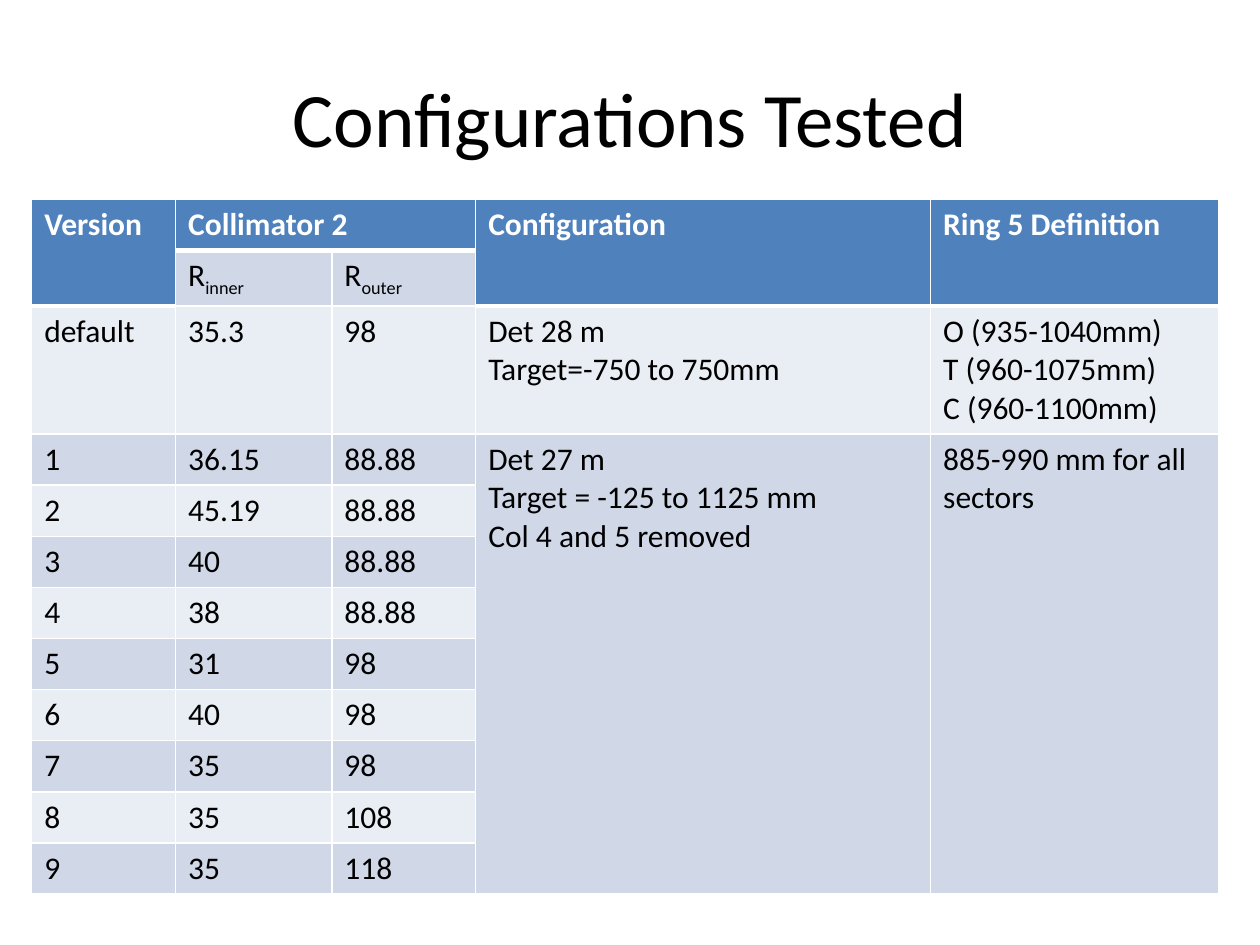
from lxml.etree import SubElement
from pptx import Presentation
from pptx.dml.color import RGBColor
from pptx.enum.text import MSO_ANCHOR, PP_ALIGN
from pptx.oxml.ns import qn
from pptx.util import Cm, Pt

HEADER, BAND_DARK, BAND_LIGHT = "4F81BD", "D0D8E8", "E9EDF4"
WHITE, BLACK = "FFFFFF", "000000"
TITLE_FONT = {"name": "Calibri", "size": Pt(44), "bold": False}
BODY_FONT = {"name": "Calibri", "size": Pt(18), "bold": False}
HEADER_FONT = BODY_FONT | {"bold": True}

COLUMN_WIDTHS = [2.9, 3.15, 2.9, 9.17]
ROW_HEIGHT, DEFAULT_ROW, DEFAULT_HEIGHT = 1.03, 2, 2.58
MERGES = [(0, 0, 1, 0), (0, 1, 0, 2), (0, 3, 1, 3), (0, 4, 1, 4),
          (3, 3, 11, 3), (3, 4, 11, 4)]
ROWS = [
    ["Version", "Collimator 2", "", "Configuration", "Ring 5 Definition"],
    ["", "R_inner", "R_outer", "", ""],
    ["default", "35.3", "98", "Det 28 m\nTarget=-750 to 750mm",
     "O (935-1040mm)\nT (960-1075mm)\nC (960-1100mm)"],
    ["1", "36.15", "88.88",
     "Det 27 m\nTarget = -125 to 1125 mm\nCol 4 and 5 removed",
     "885-990 mm for all sectors"],
    ["2", "45.19", "88.88", "", ""],
    ["3", "40", "88.88", "", ""],
    ["4", "38", "88.88", "", ""],
    ["5", "31", "98", "", ""],
    ["6", "40", "98", "", ""],
    ["7", "35", "98", "", ""],
    ["8", "35", "108", "", ""],
    ["9", "35", "118", "", ""],
]


def color(value):
    return RGBColor.from_string(value)


def set_values(target, values):
    for name, value in values.items():
        setattr(target, name, value)


def add_run(paragraph, text, font, text_color):
    run = paragraph.add_run()
    run.text = text
    set_values(run.font, font)
    run.font.color.rgb = color(text_color)
    return run


def write_cell(cell, text, font, text_color):
    frame = cell.text_frame
    for index, line in enumerate(text.split("\n")):
        paragraph = frame.add_paragraph() if index else frame.paragraphs[0]
        base, _, subscript = line.partition("_")
        add_run(paragraph, base, font, text_color)
        if subscript:
            run = add_run(paragraph, subscript, font, text_color)
            run._r.get_or_add_rPr().set("baseline", "-25000")


def add_borders(cell, widths):
    properties = cell._tc.get_or_add_tcPr()
    for side, width in widths.items():
        line = SubElement(properties, qn(f"a:ln{side}"), w=str(Pt(width)))
        fill = SubElement(line, qn("a:solidFill"))
        SubElement(fill, qn("a:srgbClr"), val=WHITE)


def add_title(slide, left, top, width, height):
    shape = slide.shapes.add_textbox(left, top, width, height)
    set_values(shape.text_frame, {"word_wrap": True,
                                  "vertical_anchor": MSO_ANCHOR.MIDDLE})
    paragraph = shape.text_frame.paragraphs[0]
    paragraph.alignment = PP_ALIGN.CENTER
    add_run(paragraph, "Configurations Tested", TITLE_FONT, BLACK)


def add_configuration_table(slide, left, top, width, height):
    shape = slide.shapes.add_table(len(ROWS), len(ROWS[0]), left, top, width, height)
    table = shape.table
    widths = [Cm(value) for value in COLUMN_WIDTHS]
    widths.append(width - sum(widths))
    for column, column_width in zip(table.columns, widths):
        column.width = column_width
    for index, row in enumerate(table.rows):
        row.height = Cm(DEFAULT_HEIGHT if index == DEFAULT_ROW else ROW_HEIGHT)
    for first_row, first_column, last_row, last_column in MERGES:
        table.cell(first_row, first_column).merge(table.cell(last_row, last_column))

    for row_index, texts in enumerate(ROWS):
        band = BAND_DARK if row_index % 2 else BAND_LIGHT
        for column_index, text in enumerate(texts):
            cell = table.cell(row_index, column_index)
            is_header = row_index == 0 or (row_index == 1 and cell.is_spanned)
            borders = {"L": 1, "R": 1}
            if row_index == 0:
                borders["T"] = 1
            borders["B"] = 3 if is_header else 1
            add_borders(cell, borders)
            cell.fill.solid()
            cell.fill.fore_color.rgb = color(HEADER if is_header else band)
            if text:
                write_cell(cell, text, HEADER_FONT if is_header else BODY_FONT,
                           WHITE if is_header else BLACK)


def main():
    presentation = Presentation()
    set_values(presentation, {"slide_width": Cm(25.4), "slide_height": Cm(19.05)})
    slide = presentation.slides.add_slide(presentation.slide_layouts[6])
    add_title(slide, Cm(1.27), Cm(0.76), Cm(22.86), Cm(3.18))
    add_configuration_table(slide, Cm(0.64), Cm(4.02), Cm(23.92), Cm(13.8))
    presentation.save("out.pptx")


if __name__ == "__main__":
    main()
